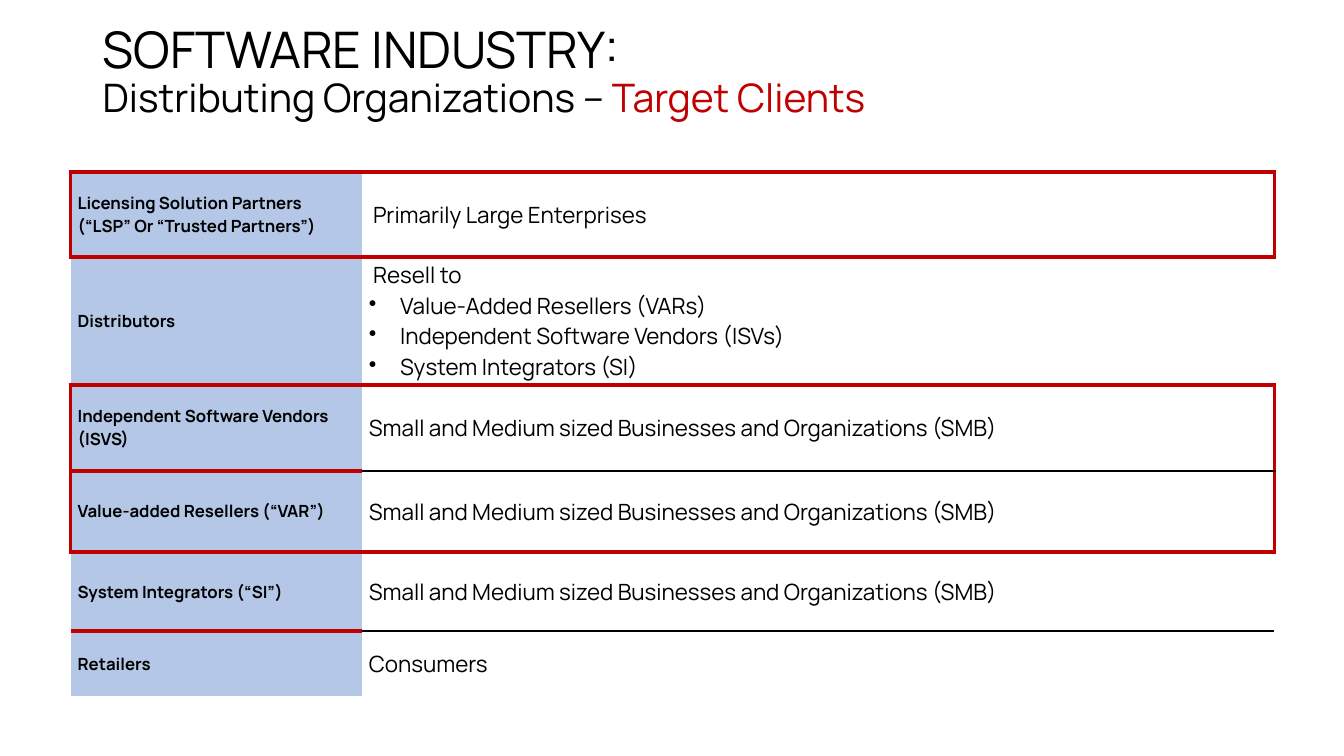
from lxml.etree import SubElement as Sub
from pptx import Presentation
from pptx.dml.color import RGBColor as Rgb
from pptx.enum.text import MSO_ANCHOR as Anchor, PP_ALIGN as Align
from pptx.oxml.ns import qn
from pptx.util import Inches, Pt

WIDE, HIGH = 13.33, 7.5
FONT = "Manrope"
BLACK, RED, BLUE = "000000", "C00000", "B4C7E7"
PLAIN = "{2D5ABB26-0587-4C30-8999-92F81FD0307C}"
COLS = [2.89, 9.05]
SMB = "Small and Medium sized Businesses and Organizations (SMB)"
RESELL = [
    "Resell to",
    "• Value-Added Resellers (VARs)",
    "• Independent Software Vendors (ISVs)",
    "• System Integrators (SI)",
]
# Edges: upper case is a thick red side, lower case a thin black one.
ROWS = [
    (0.84, "Licensing Solution Partners (“LSP” Or “Trusted Partners”)",
     ["Primarily Large Enterprises"], 0.04, "LTB", "RTB"),
    (1.27, "Distributors", RESELL, 0.04, "TB", "TB"),
    (0.85, "Independent Software Vendors (ISVS)", [SMB], 0, "LTB", "RTb"),
    (0.81, "Value-added Resellers (“VAR”)", [SMB], 0, "LTB", "RtB"),
    (0.78, "System Integrators (“SI”)", [SMB], 0, "TB", "Tb"),
    (0.65, "Retailers", ["Consumers"], 0, "T", "t"),
]


def color(code):
    return Rgb.from_string(code)


def style(font, size, tint=BLACK, bold=False):
    font.name, font.size, font.bold = FONT, Pt(size), bold
    font.color.rgb = color(tint)


def add_title(slide):
    box = slide.shapes.add_textbox(
        Inches(0.069 * WIDE), 0, Inches(0.863 * WIDE), Inches(0.193 * HIGH))
    frame = box.text_frame
    frame.word_wrap = True
    frame.vertical_anchor = Anchor.MIDDLE
    line = frame.paragraphs[0]
    line.line_spacing = 0.9
    parts = [("SOFTWARE INDUSTRY:", 36, BLACK),
             ("Distributing Organizations – ", 28, BLACK),
             ("Target Clients", 28, RED)]
    for spot, (text, size, tint) in enumerate(parts):
        if spot == 1:
            line.add_line_break()
        run = line.add_run()
        run.text = text
        style(run.font, size, tint)


def add_edges(cell, edges):
    props = cell._tc.get_or_add_tcPr()
    marks = {mark.upper(): mark for mark in edges}
    for side in "LRTB":
        mark = marks.get(side)
        thick = mark == side
        width = Pt(3 if thick else 1.5) if mark else 0
        edge = Sub(props, qn(f"a:ln{side}"), w=str(width))
        fill = Sub(edge, qn("a:solidFill" if mark else "a:noFill"))
        if mark:
            Sub(fill, qn("a:srgbClr"), val=RED if thick else BLACK)


def indent(line, left, first=0, mark=None):
    props = line._p.get_or_add_pPr()
    props.set("marL", str(Inches(left)))
    props.set("indent", str(Inches(first)))
    if mark:
        bullet = Sub(props, qn("a:buChar"), char=mark)
        props.remove(bullet)
        props.insert_element_before(bullet, "a:tabLst", "a:defRPr", "a:extLst")


def fill_cell(cell, texts, size, edges, tint=None, bold=False, left=0, align=Align.LEFT):
    cell.margin_left = cell.margin_right = Inches(0.07)
    cell.margin_top = cell.margin_bottom = 0
    cell.vertical_anchor = Anchor.MIDDLE
    add_edges(cell, edges)
    if tint:
        cell.fill.solid()
        cell.fill.fore_color.rgb = color(tint)
    else:
        cell.fill.background()
    frame = cell.text_frame
    frame.text = "\n".join(text.removeprefix("• ") for text in texts)
    for line, text in zip(frame.paragraphs, texts):
        line.alignment = align
        style(line.font, size, bold=bold)
        if text.startswith("•"):
            indent(line, 0.31, -0.31, "•")
        else:
            indent(line, left)


def add_grid(slide):
    frame = slide.shapes.add_table(
        len(ROWS), len(COLS), Inches(0.0525 * WIDE), Inches(0.228 * HIGH),
        Inches(sum(COLS)), Inches(sum(row[0] for row in ROWS)))
    table = frame.table
    table._tbl.tblPr.find(qn("a:tableStyleId")).text = PLAIN
    table.first_row = table.horz_banding = False
    for col, width in zip(table.columns, COLS):
        col.width = Inches(width)
    for spot, (height, name, clients, left, near, far) in enumerate(ROWS):
        table.rows[spot].height = Inches(height)
        fill_cell(table.cell(spot, 0), [name], 12, near, BLUE, True)
        fill_cell(table.cell(spot, 1), clients, 16, far, left=left, align=Align.JUSTIFY)


def main():
    deck = Presentation()
    deck.slide_width, deck.slide_height = Inches(WIDE), Inches(HIGH)
    slide = deck.slides.add_slide(deck.slide_layouts[6])
    add_title(slide)
    add_grid(slide)
    deck.save("out.pptx")


if __name__ == "__main__":
    main()
